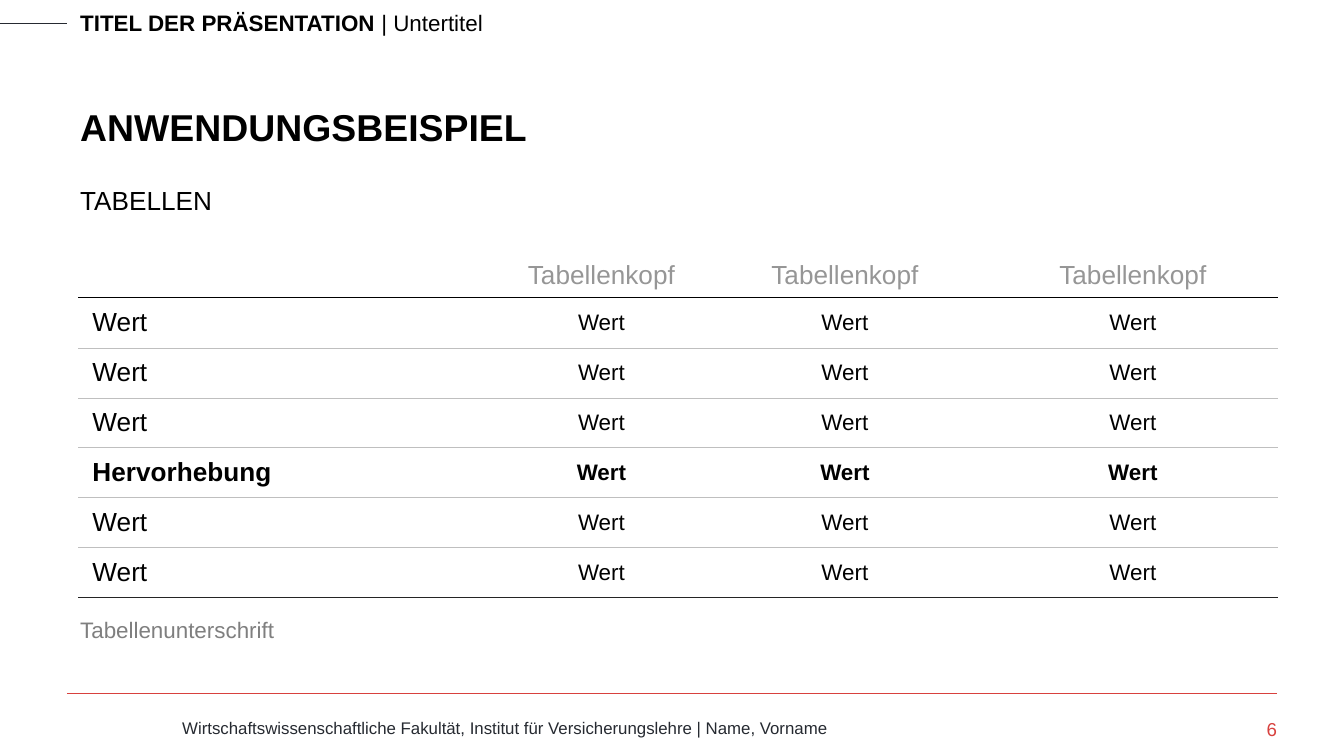
import pptx
import pptx.dml.color
import pptx.enum.shapes
import pptx.enum.text
import pptx.oxml
import pptx.oxml.ns
import pptx.util

SLIDE_WIDTH, SLIDE_HEIGHT = 1344, 756
SCALE = 9144000 / SLIDE_WIDTH
COLORS = {
    "black": "000000",
    "ink": "262A31",
    "red": "D8413E",
    "caption": "7F7F7F",
    "head": "969696",
    "rule": "BFBFBF",
    "end": "242424",
    "white": "FFFFFF",
}
ALIGN = pptx.enum.text.PP_ALIGN
ANCHOR = pptx.enum.text.MSO_ANCHOR
COLUMN_WIDTHS = [423, 199, 288, 288]
HEAD_HEIGHT, ROW_HEIGHT = 44, 50
HEADS = ["", "Tabellenkopf", "Tabellenkopf", "Tabellenkopf"]
ROW_LABELS = ["Wert", "Wert", "Wert", "Hervorhebung", "Wert", "Wert"]


def px(value):
    return pptx.util.Emu(round(value * SCALE))


def rgb(name):
    return pptx.dml.color.RGBColor.from_string(COLORS[name])


def add_run(paragraph, text, size, color="black", bold=False):
    run = paragraph.add_run()
    run.text = text
    values = {"name": "Arial", "size": pptx.util.Pt(size), "bold": bold}
    for key, value in values.items():
        setattr(run.font, key, value)
    run.font.color.rgb = rgb(color)


def add_text(slide, box, runs, align=ALIGN.LEFT, **frame_format):
    shape = slide.shapes.add_textbox(*map(px, box))
    frame = shape.text_frame
    frame.word_wrap = True
    for key, value in frame_format.items():
        setattr(frame, key, value)
    paragraph = frame.paragraphs[0]
    paragraph.alignment = align
    for run in runs:
        add_run(paragraph, *run)


def add_rule(slide, left, right, top, color):
    line = slide.shapes.add_connector(
        pptx.enum.shapes.MSO_CONNECTOR.STRAIGHT, px(left), px(top), px(right), px(top))
    line.line.color.rgb = rgb(color)
    line.line.width = pptx.util.Pt(0.25)
    properties = line._element.spPr
    properties.append(properties.makeelement(pptx.oxml.ns.qn("a:effectLst"), {}))


def set_borders(cell, top, bottom):
    side = ("white", 1)
    properties = cell._tc.get_or_add_tcPr()
    for edge, border in {"L": side, "R": side, "T": top, "B": bottom}.items():
        if border:
            color, points = border
            width = pptx.util.Pt(points)
            fill = f'<a:solidFill><a:srgbClr val="{COLORS[color]}"/></a:solidFill>'
        else:
            width, fill = 0, "<a:noFill/>"
        properties.append(pptx.oxml.parse_xml(
            f'<a:ln{edge} {pptx.oxml.ns.nsdecls("a")} w="{width}">{fill}</a:ln{edge}>'))


def fill_cell(cell, text, size, color, bold, align, top, bottom):
    set_borders(cell, top, bottom)
    cell.fill.background()
    cell.vertical_anchor = ANCHOR.MIDDLE
    if text:
        paragraph = cell.text_frame.paragraphs[0]
        paragraph.alignment = align
        add_run(paragraph, text, size, color, bold)
    else:
        cell.margin_top = cell.margin_bottom = 0


def add_value_table(slide, left, top):
    row_count = len(ROW_LABELS) + 1
    height = HEAD_HEIGHT + ROW_HEIGHT * len(ROW_LABELS)
    table = slide.shapes.add_table(
        row_count, len(COLUMN_WIDTHS), px(left), px(top),
        px(sum(COLUMN_WIDTHS)), px(height)).table
    table.first_row = table.horz_banding = False
    for column, width in zip(table.columns, COLUMN_WIDTHS):
        column.width = px(width)
    for row in table.rows:
        row.height = px(ROW_HEIGHT)
    table.rows[0].height = px(HEAD_HEIGHT)

    borders = [None, ("black", 0.5)]
    borders += [("rule", 0.25)] * (len(ROW_LABELS) - 1) + [("end", 0.5)]
    texts = [HEADS] + [[label] + ["Wert"] * 3 for label in ROW_LABELS]
    for row_index, row_texts in enumerate(texts):
        is_head = row_index == 0
        for column_index, text in enumerate(row_texts):
            is_label = column_index == 0
            fill_cell(
                table.cell(row_index, column_index), text,
                size=14 if is_head or is_label else 12,
                color="head" if is_head else "black",
                bold=row_texts[0] == "Hervorhebung",
                align=ALIGN.LEFT if is_label else ALIGN.CENTER,
                top=borders[row_index], bottom=borders[row_index + 1])


def main():
    presentation = pptx.Presentation()
    presentation.slide_width = px(SLIDE_WIDTH)
    presentation.slide_height = px(SLIDE_HEIGHT)
    slide = presentation.slides.add_slide(presentation.slide_layouts[6])

    add_rule(slide, 0, 67, 23, "ink")
    add_text(slide, (67, 3, 1030, 40),
             [("TITEL DER PRÄSENTATION ", 12, "black", True), ("| Untertitel", 12)])
    add_rule(slide, 67, 1277, 693, "red")
    add_text(slide, (169, 711, 708, 34), [
        ("Wirtschaftswissenschaftliche Fakultät, Institut für Versicherungslehre"
         " | Name, Vorname", 9, "ink")])
    add_text(slide, (67, 44, 1210, 112), [("ANWENDUNGSBEISPIEL", 20, "black", True)],
             vertical_anchor=ANCHOR.BOTTOM)
    add_text(slide, (67, 610, 1210, 81), [("Tabellenunterschrift", 12, "caption")])
    add_text(slide, (67, 168, 1210, 54), [("TABELLEN", 14)],
             vertical_anchor=ANCHOR.BOTTOM)
    add_value_table(slide, 79, 253)
    add_text(slide, (1168, 718, 109, 30), [("6", 10, "red")], ALIGN.RIGHT,
             margin_left=0, margin_top=0, margin_right=0, margin_bottom=0)
    presentation.save("out.pptx")


if __name__ == "__main__":
    main()
